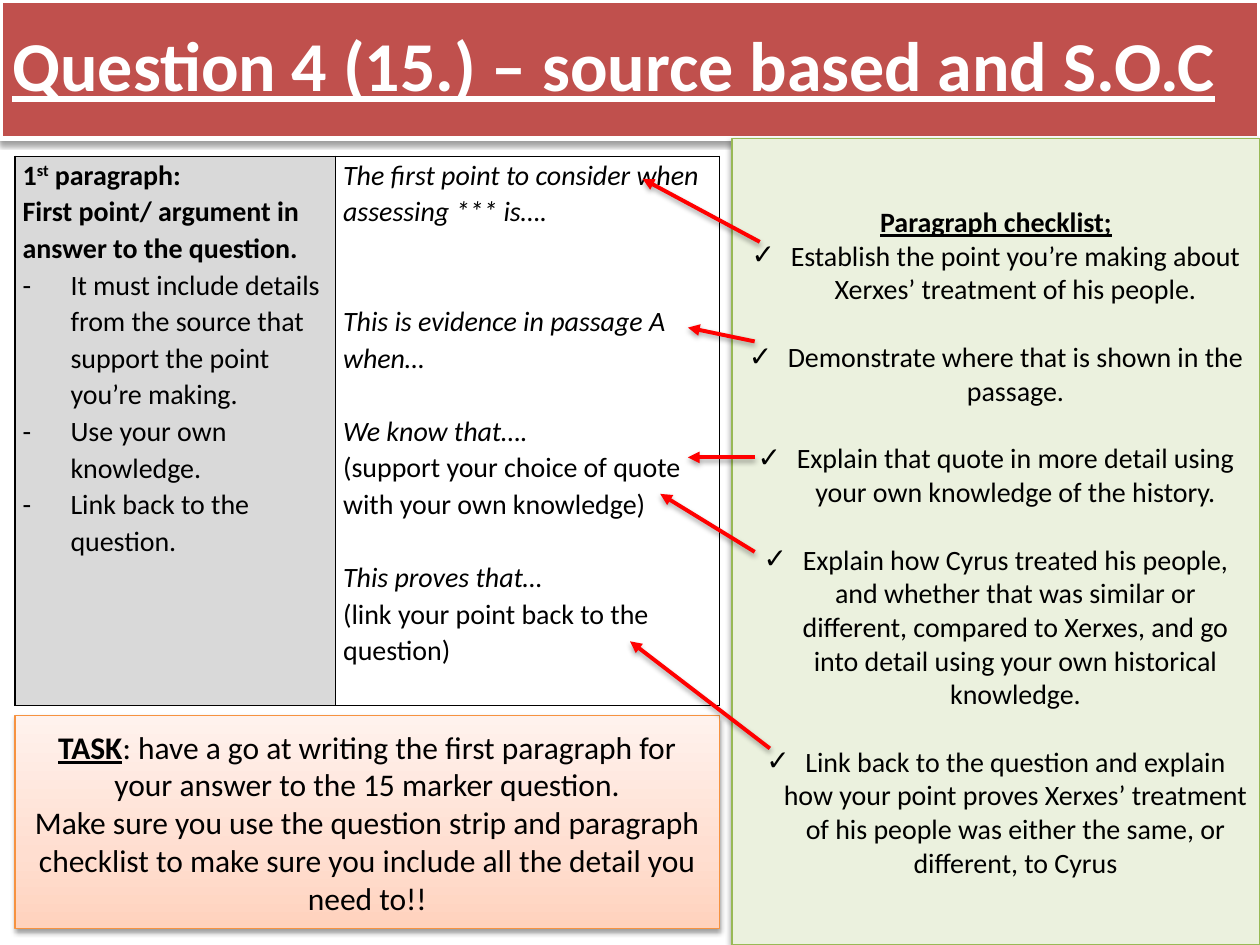
import pptx
import pptx.dml.color
import pptx.enum.shapes
import pptx.enum.text
import pptx.oxml
import pptx.oxml.ns
import pptx.util
from lxml import etree

CELL = pptx.util.Inches(0.1)  # the slide is a grid of 100 columns by 75 rows
FONT = "Calibri"
BLACK, WHITE, RED = "000000", "FFFFFF", "FF0000"
BLANK_LINE = 19.5  # height of one 16 pt line, in points
CENTER = pptx.enum.text.PP_ALIGN.CENTER
LEFT = pptx.enum.text.PP_ALIGN.LEFT


def grid(*cells):
    return [int(cell * CELL) for cell in cells]


def color(value):
    return pptx.dml.color.RGBColor.from_string(value)


def add_xml(parent, text):
    namespace = pptx.oxml.ns.nsdecls("a")
    parent.append(pptx.oxml.parse_xml(text.replace(">", f" {namespace}>", 1)))


def add_shadow(shape, alpha=38, distance=1.6):
    properties = shape._element.spPr
    for old in properties.findall(pptx.oxml.ns.qn("a:effectLst")):
        properties.remove(old)
    add_xml(properties, f'<a:effectLst><a:outerShdw blurRad="{pptx.util.Pt(3.1)}" '
            f'dist="{pptx.util.Pt(distance)}" dir="5400000" rotWithShape="0">'
            f'<a:srgbClr val="{BLACK}"><a:alpha val="{alpha}000"/></a:srgbClr>'
            '</a:outerShdw></a:effectLst>')


def write(frame, spans, size=16, ink=BLACK, align=LEFT, spacing=1.0, before=0,
          bullet=None, indent=0, **style):
    """Add one paragraph; spans is a string or a list of (text, style) pairs."""
    para = frame.paragraphs[0]
    if para.runs:
        para = frame.add_paragraph()
    para.alignment = align
    para.line_spacing = spacing
    para.space_before = pptx.util.Pt(before)
    if bullet:
        properties = para._p.get_or_add_pPr()
        properties.set("marL", str(pptx.util.Inches(indent)))
        properties.set("indent", str(-pptx.util.Inches(indent)))
        add_xml(properties, f'<a:buFont typeface="{FONT}"></a:buFont>')
        add_xml(properties, f'<a:buChar char="{bullet}"></a:buChar>')
    for text, extra in [(spans, {})] if isinstance(spans, str) else spans:
        look = {**style, **extra}
        span = para.add_run()
        span.text = text
        span.font.name = FONT
        span.font.size = pptx.util.Pt(size)
        span.font.color.rgb = color(ink)
        span.font.bold = look.get("bold", False)
        span.font.italic = look.get("italic", False)
        span.font.underline = look.get("underline", False)
        if look.get("raised"):
            span._r.get_or_add_rPr().set("baseline", "30000")


def add_panel(page, box, fill, outline, width=0.75):
    """Draw a shadowed rectangle and return it; a list fill is a gradient."""
    panel = page.shapes.add_shape(
        pptx.enum.shapes.MSO_SHAPE.RECTANGLE, *grid(*box))
    if isinstance(fill, str):
        panel.fill.solid()
        panel.fill.fore_color.rgb = color(fill)
    else:
        stops = "".join(f'<a:gs pos="{place}000"><a:srgbClr val="{tone}"/></a:gs>'
                        for place, tone in fill)
        add_xml(panel._element.spPr, f'<a:gradFill><a:gsLst>{stops}</a:gsLst>'
                '<a:lin ang="16200000" scaled="0"/></a:gradFill>')
    panel.line.color.rgb = color(outline)
    panel.line.width = pptx.util.Pt(width)
    panel.shadow.inherit = False
    add_shadow(panel)
    panel.text_frame.word_wrap = True
    panel.text_frame.vertical_anchor = pptx.enum.text.MSO_ANCHOR.MIDDLE
    return panel


def add_title(page, box):
    panel = add_panel(page, box, "C0504D", WHITE, 3)
    write(panel.text_frame, "Question 4 (15.) – source based and S.O.C", size=40,
          ink=WHITE, spacing=0.9, bold=True, underline=True)


def style_cell(cell, fill):
    properties = cell._tc.get_or_add_tcPr()
    for side in "LRTB":
        add_xml(properties, f'<a:ln{side} w="{pptx.util.Pt(1)}"><a:solidFill>'
                f'<a:srgbClr val="{BLACK}"/></a:solidFill></a:ln{side}>')
    cell.fill.solid()
    cell.fill.fore_color.rgb = color(fill)
    cell.margin_left = cell.margin_right = pptx.util.Inches(0.06)
    cell.margin_top = cell.margin_bottom = 0


def add_question_strip(page, box):
    table = page.shapes.add_table(1, 2, *grid(*box)).table
    table.first_row = table.horz_banding = False
    left_share = 0.455
    for column, share in zip(table.columns, (left_share, 1 - left_share)):
        column.width = int(box[2] * share * CELL)
    guide, starters = table.cell(0, 0), table.cell(0, 1)
    style_cell(guide, "D9D9D9")
    style_cell(starters, WHITE)

    # Left: what the paragraph needs
    spacing = 1.07
    write(guide.text_frame,
          [("1", {}), ("st", {"raised": True}), (" paragraph:", {})],
          spacing=spacing, bold=True)
    write(guide.text_frame, "First point/ argument in answer to the question.",
          spacing=spacing, bold=True)
    for text in ("It must include details from the source that support the point "
                 "you’re making.",
                 "Use your own knowledge.",
                 "Link back to the question."):
        write(guide.text_frame, text, spacing=spacing, bullet="-", indent=0.38)

    # Right: sentence starters, with blank lines before and italics
    for text, blank_lines, italic in (
            ("The first point to consider when assessing *** is….", 0, True),
            ("This is evidence in passage A when…", 2, True),
            ("We know that….", 1, True),
            ("(support your choice of quote with your own knowledge)", 0, False),
            ("This proves that…", 1, True),
            ("(link your point back to the question)", 0, False)):
        write(starters.text_frame, text, spacing=spacing, italic=italic,
              before=round(blank_lines * BLANK_LINE * spacing, 1))


def add_checklist(page, box):
    frame = add_panel(page, box, "EBF1DE", "98B955").text_frame
    write(frame, "Paragraph checklist;", align=CENTER, bold=True, underline=True)
    for number, text in enumerate((
            "Establish the point you’re making about Xerxes’ treatment of his people.",
            "Demonstrate where that is shown in the passage.",
            "Explain that quote in more detail using your own knowledge of the history.",
            "Explain how Cyrus treated his people, and whether that was similar or "
            "different, compared to Xerxes, and go into detail using your own "
            "historical knowledge.",
            "Link back to the question and explain how your point proves Xerxes’ "
            "treatment of his people was either the same, or different, to Cyrus")):
        write(frame, text, align=CENTER, bullet="✓", indent=0.31,
              before=BLANK_LINE if number else 0)


def add_task(page, box):
    gradient = [(0, "FFD2BD"), (35, "FFDED0"), (100, "FFF2ED")]
    frame = add_panel(page, box, gradient, "F69240").text_frame
    write(frame, [("TASK", {"bold": True, "underline": True}),
                  (": have a go at writing the first paragraph for your answer to "
                   "the 15 marker question.", {})], size=18, align=CENTER)
    write(frame, "Make sure you use the question strip and paragraph checklist to "
          "make sure you include all the detail you need to!!",
          size=18, align=CENTER)


def add_arrows(page, box):
    """Point from each checklist item to its sentence starter."""
    left, top = box[:2]
    for start_x, start_y, end_x, end_y in (
            (2.2, 8.2, -7.1, 3.2), (1.8, 16.1, -3.5, 15), (1.8, 25.3, -3.5, 25.3),
            (1.8, 32.8, -5.7, 28.2), (3, 48.4, -8.1, 39.9)):
        arrow = page.shapes.add_connector(
            pptx.enum.shapes.MSO_CONNECTOR.STRAIGHT,
            *grid(left + start_x, top + start_y, left + end_x, top + end_y))
        arrow.line.color.rgb = color(RED)
        arrow.line.width = pptx.util.Pt(2.25)
        add_xml(arrow.line._get_or_add_ln(), '<a:tailEnd type="triangle"></a:tailEnd>')
        add_shadow(arrow, alpha=35, distance=1.8)


def main():
    deck = pptx.Presentation()
    deck.slide_width, deck.slide_height = grid(100, 75)
    page = deck.slides.add_slide(deck.slide_layouts[6])
    checklist_box = (58.1, 11, 41.9, 64)
    add_title(page, (0, 0, 100, 11))
    add_question_strip(page, (1.2, 12.4, 55.9, 43.6))
    add_checklist(page, checklist_box)
    add_task(page, (1.2, 56.8, 55.9, 16.9))
    add_arrows(page, checklist_box)
    deck.save("out.pptx")


if __name__ == "__main__":
    main()
